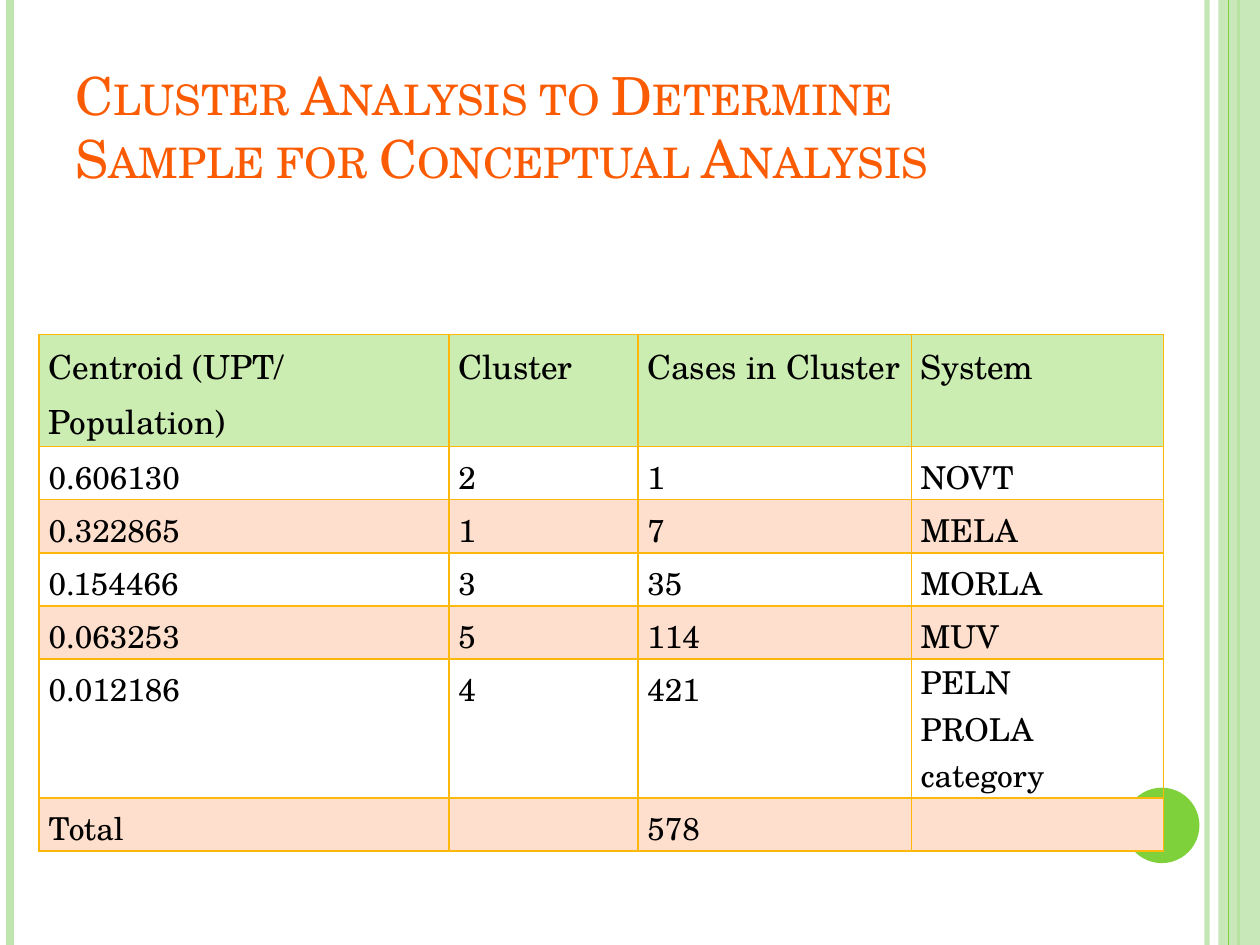
"""Build a slide with a table of cluster analysis results."""
from lxml.etree import SubElement
from pptx import Presentation
from pptx.dml.color import RGBColor
from pptx.enum.shapes import MSO_CONNECTOR, MSO_SHAPE
from pptx.enum.text import MSO_ANCHOR, MSO_AUTO_SIZE, PP_ALIGN
from pptx.oxml.ns import qn
from pptx.util import Cm, Pt

FONT = "TeX Gyre Schola"
WIDTH, HEIGHT = 25.4, 19.05
TITLE = "Cluster Analysis to Determine\vSample for Conceptual Analysis"
ROWS = [
    ("Centroid (UPT/ Population)", "Cluster", "Cases in Cluster", "System"),
    ("0.606130", "2", "1", "NOVT"),
    ("0.322865", "1", "7", "MELA"),
    ("0.154466", "3", "35", "MORLA"),
    ("0.063253", "5", "114", "MUV"),
    ("0.012186", "4", "421", "PELN\nPROLA category"),
    ("Total", "", "578", ""),
]
COLUMN_WIDTHS = [8.26, 3.81, 5.51, 5.08]
ROW_HEIGHTS = [2.26, 1.07, 1.07, 1.07, 1.07, 2.79, 1.07]
HEADER_FILL, BAND_FILL, BORDER = "CCEDB1", "FEDECC", "FEB80A"
BACK_STRIPES = [
    (24.33, "C0E5AF", 3, 93),
    (0.21, "C0E5AF", 4.5, 100),
    (24.97, "7FD13B", 1.5, 100),
]
FRONT_STRIPE = (24.77, "7FD13B", 0.75, 100)


def paint(fill, colour, opacity=100):
    fill.solid()
    fill.fore_color.rgb = RGBColor.from_string(colour)
    if opacity < 100:
        choice = fill._xPr.find(qn("a:solidFill"))[0]
        SubElement(choice, qn("a:alpha"), val=str(opacity * 1000))


def style(span, size, colour):
    span.font.name = FONT
    span.font.size = Pt(size)
    paint(span.font.fill, colour)


def add_stripe(page, x, colour, weight, opacity):
    stripe = page.shapes.add_connector(
        MSO_CONNECTOR.STRAIGHT, Cm(x), Cm(0), Cm(x), Cm(HEIGHT))
    stripe.line.width = Pt(weight)
    paint(stripe.line.fill, colour, opacity)
    SubElement(stripe._element.spPr, qn("a:effectLst"))


def add_ornament(page, kind, area, colour, opacity=100):
    ornament = page.shapes.add_shape(kind, *map(Cm, area))
    ornament.shadow.inherit = False
    ornament.line.fill.background()
    paint(ornament.fill, colour, opacity)


def add_title(page):
    title = page.shapes.title
    title.left, title.top, title.width, title.height = map(
        Cm, (1.27, 0.76, 20.75, 3.18))
    frame = title.text_frame
    frame.text = TITLE
    frame.word_wrap = True
    frame.auto_size = MSO_AUTO_SIZE.NONE
    frame.vertical_anchor = MSO_ANCHOR.BOTTOM
    para = frame.paragraphs[0]
    para.alignment = PP_ALIGN.LEFT
    para.line_spacing = 1.0
    for span in para.runs:
        style(span, 30, "FB5C03")
        span._r.get_or_add_rPr().set("cap", "small")


def add_borders(cell):
    properties = cell._tc.get_or_add_tcPr()
    for position, side in enumerate(("a:lnL", "a:lnR", "a:lnT", "a:lnB")):
        line = SubElement(properties, qn(side), w=str(Pt(1)))
        SubElement(SubElement(line, qn("a:solidFill")), qn("a:srgbClr"), val=BORDER)
        properties.insert(position, line)


def fill_cell(cell, text, row):
    cell.margin_left = cell.margin_right = Cm(0.19)
    cell.margin_top = cell.margin_bottom = 0
    cell.vertical_anchor = MSO_ANCHOR.TOP
    cell.text = text
    paras = cell.text_frame.paragraphs
    for para in paras:
        if len(paras) == 1:
            para.line_spacing = 1.15
            para.space_before = para.space_after = Pt(10)
        for span in para.runs:
            style(span, 18 if row else 19, "000000")
    if row % 2:
        cell.fill.background()
    else:
        paint(cell.fill, BAND_FILL if row else HEADER_FILL)
    add_borders(cell)


def add_cluster_table(page):
    table = page.shapes.add_table(
        len(ROWS), len(COLUMN_WIDTHS), Cm(0.79), Cm(6.74),
        Cm(sum(COLUMN_WIDTHS)), Cm(sum(ROW_HEIGHTS))).table
    table.horz_banding = False
    table.first_row = False
    for column, width in zip(table.columns, COLUMN_WIDTHS):
        column.width = Cm(width)
    for row, height in zip(table.rows, ROW_HEIGHTS):
        row.height = Cm(height)
    for row, texts in enumerate(ROWS):
        for column, text in enumerate(texts):
            fill_cell(table.cell(row, column), text, row)


def main():
    deck = Presentation()
    deck.slide_width, deck.slide_height = Cm(WIDTH), Cm(HEIGHT)
    page = deck.slides.add_slide(deck.slide_layouts[5])
    for stripe in BACK_STRIPES:
        add_stripe(page, *stripe)
    add_ornament(page, MSO_SHAPE.RECTANGLE, (24.56, 0, 0.84, HEIGHT), "C0E5AF", 87)
    add_stripe(page, *FRONT_STRIPE)
    add_ornament(page, MSO_SHAPE.OVAL, (22.66, 15.88, 1.52, 1.52), "7FD13B")
    add_title(page)
    add_cluster_table(page)
    deck.save("out.pptx")


if __name__ == "__main__":
    main()
